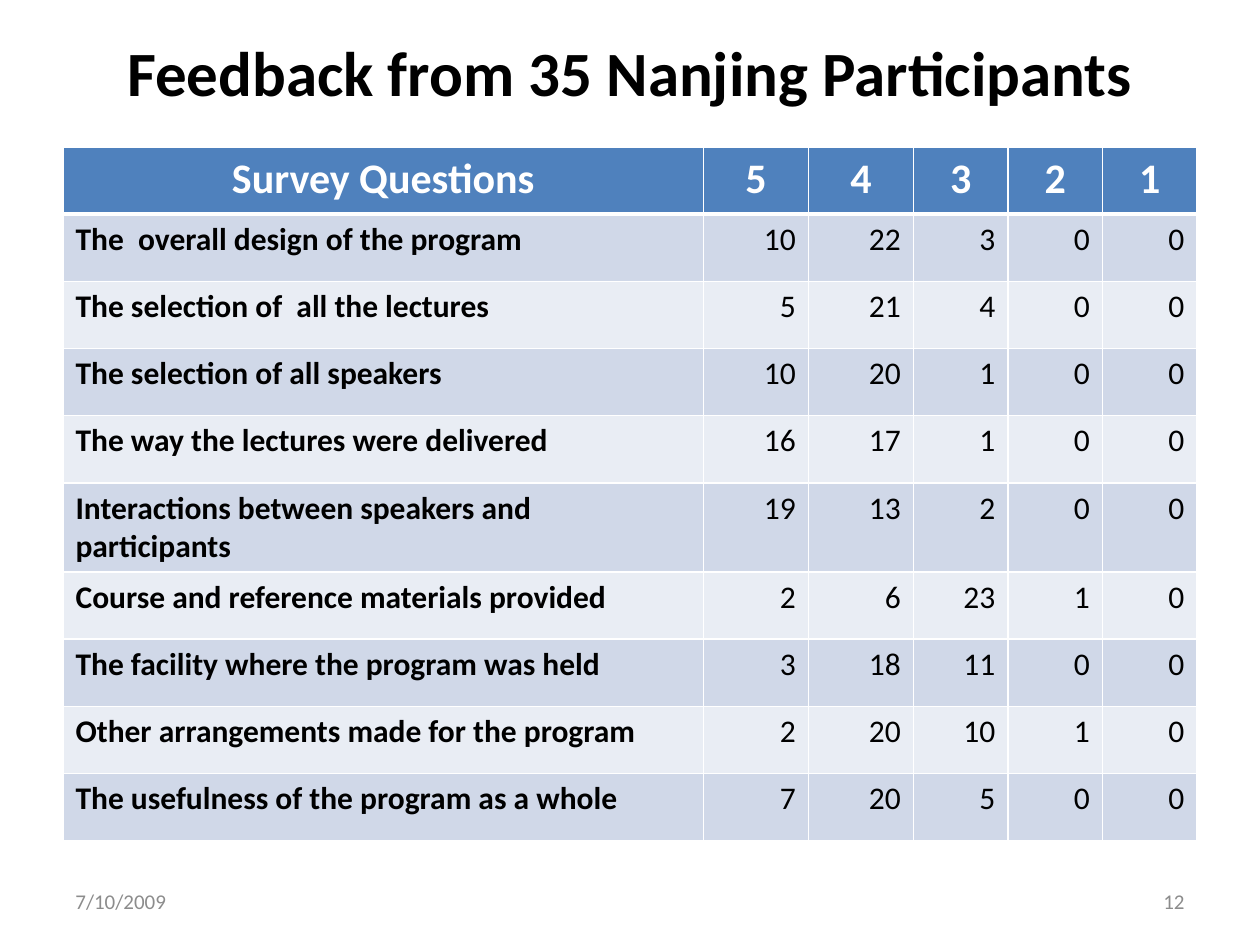
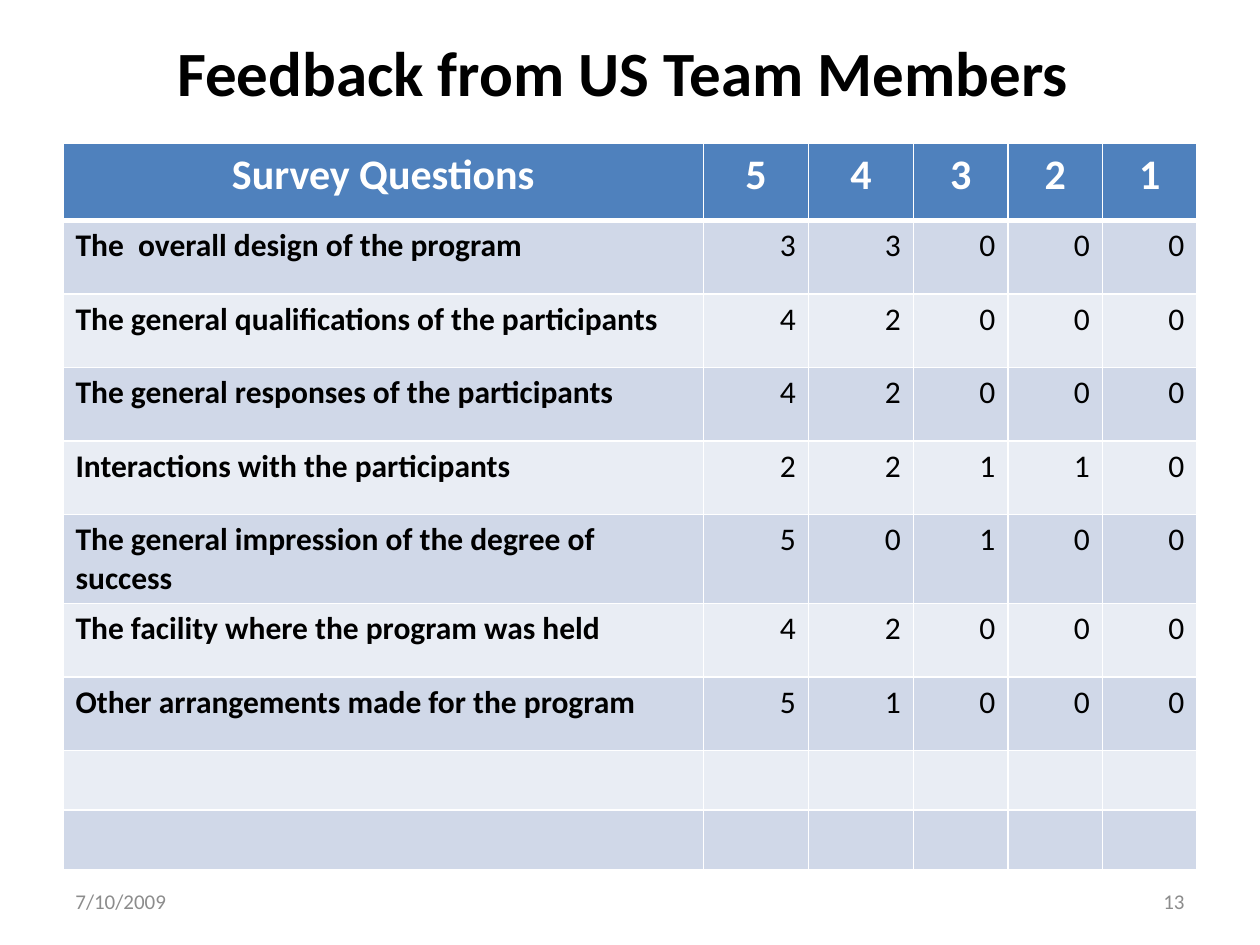
from dataclasses import dataclass

from lxml.etree import SubElement
from pptx import Presentation
from pptx.dml.color import RGBColor
from pptx.enum.text import MSO_ANCHOR, PP_ALIGN
from pptx.oxml.ns import qn
from pptx.slide import Slide
from pptx.table import _Cell
from pptx.text.text import TextFrame
from pptx.util import Pt

FONT = "Calibri"
BLACK = RGBColor(0x00, 0x00, 0x00)
WHITE = RGBColor(0xFF, 0xFF, 0xFF)
HEADER_BLUE = RGBColor(0x4F, 0x81, 0xBD)
BANDS = (RGBColor(0xD0, 0xD8, 0xE8), RGBColor(0xE9, 0xED, 0xF4))
FOOTER_GREY = RGBColor(0x8C, 0x8C, 0x8C)

MARGIN = 36
CONTENT_WIDTH = 648
FOOTER_WIDTH = 168
TWO_LINE_HEIGHT = 51
EMPTY_HEIGHT = 34
COLUMN_WIDTHS = (366, 60, 60, 54, 54, 54)
HEADINGS = ("Survey Questions", "5", "4", "3", "2", "1")
DATE = "7/10/2009"
THIN, THICK = 1, 3


@dataclass(frozen=True)
class TextStyle:
    size: int
    color: RGBColor
    bold: bool = False
    align: PP_ALIGN = PP_ALIGN.LEFT


TITLE = TextStyle(36, BLACK, True, PP_ALIGN.CENTER)
HEADING = TextStyle(24, WHITE, True, PP_ALIGN.CENTER)
QUESTION = TextStyle(18, BLACK, True)
COUNT = TextStyle(18, BLACK, align=PP_ALIGN.RIGHT)
FOOTER_DATE = TextStyle(12, FOOTER_GREY)
FOOTER_NUMBER = TextStyle(12, FOOTER_GREY, align=PP_ALIGN.RIGHT)


@dataclass(frozen=True)
class Answer:
    question: str
    counts: tuple[int, ...]
    two_lines: bool = False


@dataclass(frozen=True)
class Survey:
    title: str
    number: int
    top: float
    header_height: float
    row_height: float
    answers: tuple[Answer, ...]
    empty_rows: int = 0

    def heights(self) -> list[float]:
        answer_heights = [TWO_LINE_HEIGHT if answer.two_lines else self.row_height
                          for answer in self.answers]
        return [self.header_height, *answer_heights, *[EMPTY_HEIGHT] * self.empty_rows]


SURVEYS = (
    Survey("Feedback from 35 Nanjing Participants", 12, 84, 38.4, 38.4, (
        Answer("The  overall design of the program", (10, 22, 3, 0, 0)),
        Answer("The selection of  all the lectures", (5, 21, 4, 0, 0)),
        Answer("The selection of all speakers", (10, 20, 1, 0, 0)),
        Answer("The way the lectures were delivered", (16, 17, 1, 0, 0)),
        Answer("Interactions between speakers and participants", (19, 13, 2, 0, 0), True),
        Answer("Course and reference materials provided", (2, 6, 23, 1, 0)),
        Answer("The facility where the program was held", (3, 18, 11, 0, 0)),
        Answer("Other arrangements made for the program", (2, 20, 10, 1, 0)),
        Answer("The usefulness of the program as a whole", (7, 20, 5, 0, 0)),
    )),
    Survey("Feedback from US Team Members ", 13, 81.6, 44.4, 42, (
        Answer("The  overall design of the program", (3, 3, 0, 0, 0)),
        Answer("The general qualifications of the participants", (4, 2, 0, 0, 0)),
        Answer("The general responses of the participants", (4, 2, 0, 0, 0)),
        Answer("Interactions with the participants", (2, 2, 1, 1, 0)),
        Answer("The general impression of the degree of success", (5, 0, 1, 0, 0), True),
        Answer("The facility where the program was held", (4, 2, 0, 0, 0)),
        Answer("Other arrangements made for the program", (5, 1, 0, 0, 0)),
    ), empty_rows=2),
)


def write(frame: TextFrame, text: str, style: TextStyle) -> None:
    paragraph = frame.paragraphs[0]
    paragraph.alignment = style.align
    run = paragraph.add_run()
    run.text = text
    run.font.name = FONT
    run.font.size = Pt(style.size)
    run.font.bold = style.bold
    run.font.color.rgb = style.color


def add_label(slide: Slide, text: str, style: TextStyle,
              left: float, top: float, width: float, height: float) -> None:
    frame = slide.shapes.add_textbox(Pt(left), Pt(top), Pt(width), Pt(height)).text_frame
    frame.word_wrap = True
    frame.vertical_anchor = MSO_ANCHOR.MIDDLE
    write(frame, text, style)


def format_cell(cell: _Cell, color: RGBColor, top: int, bottom: int) -> None:
    properties = cell._tc.get_or_add_tcPr()
    for side, width in (("L", THIN), ("R", THIN), ("T", top), ("B", bottom)):
        line = SubElement(properties, qn(f"a:ln{side}"), w=str(Pt(width)))
        fill = SubElement(line, qn("a:solidFill"))
        SubElement(fill, qn("a:srgbClr"), val=str(WHITE))
    cell.fill.solid()
    cell.fill.fore_color.rgb = color


def add_survey_table(slide: Slide, survey: Survey) -> None:
    heights = survey.heights()
    table = slide.shapes.add_table(len(heights), len(HEADINGS), Pt(MARGIN), Pt(survey.top),
                                   Pt(CONTENT_WIDTH), Pt(sum(heights))).table
    table.first_row = table.horz_banding = False
    for column, width in zip(table.columns, COLUMN_WIDTHS):
        column.width = Pt(width)
    for index, (row, height) in enumerate(zip(table.rows, heights)):
        row.height = Pt(height)
        color = BANDS[(index - 1) % 2] if index else HEADER_BLUE
        for cell in row.cells:
            format_cell(cell, color, THICK if index == 1 else THIN, THIN if index else THICK)
    for column, heading in enumerate(HEADINGS):
        write(table.cell(0, column).text_frame, heading, HEADING)
    for row, answer in enumerate(survey.answers, start=1):
        write(table.cell(row, 0).text_frame, answer.question, QUESTION)
        for column, count in enumerate(answer.counts, start=1):
            write(table.cell(row, column).text_frame, str(count), COUNT)


def add_footer(slide: Slide, number: int) -> None:
    right = MARGIN + CONTENT_WIDTH - FOOTER_WIDTH
    for text, style, left in ((DATE, FOOTER_DATE, MARGIN), (str(number), FOOTER_NUMBER, right)):
        add_label(slide, text, style, left, 500.5, FOOTER_WIDTH, 28.75)


def main() -> None:
    presentation = Presentation()
    presentation.slide_width = Pt(720)
    presentation.slide_height = Pt(540)
    for survey in SURVEYS:
        slide = presentation.slides.add_slide(presentation.slide_layouts[6])
        add_label(slide, survey.title, TITLE, MARGIN, 21.6, CONTENT_WIDTH, 38.4)
        add_survey_table(slide, survey)
        add_footer(slide, survey.number)
    presentation.save("out.pptx")


if __name__ == "__main__":
    main()
